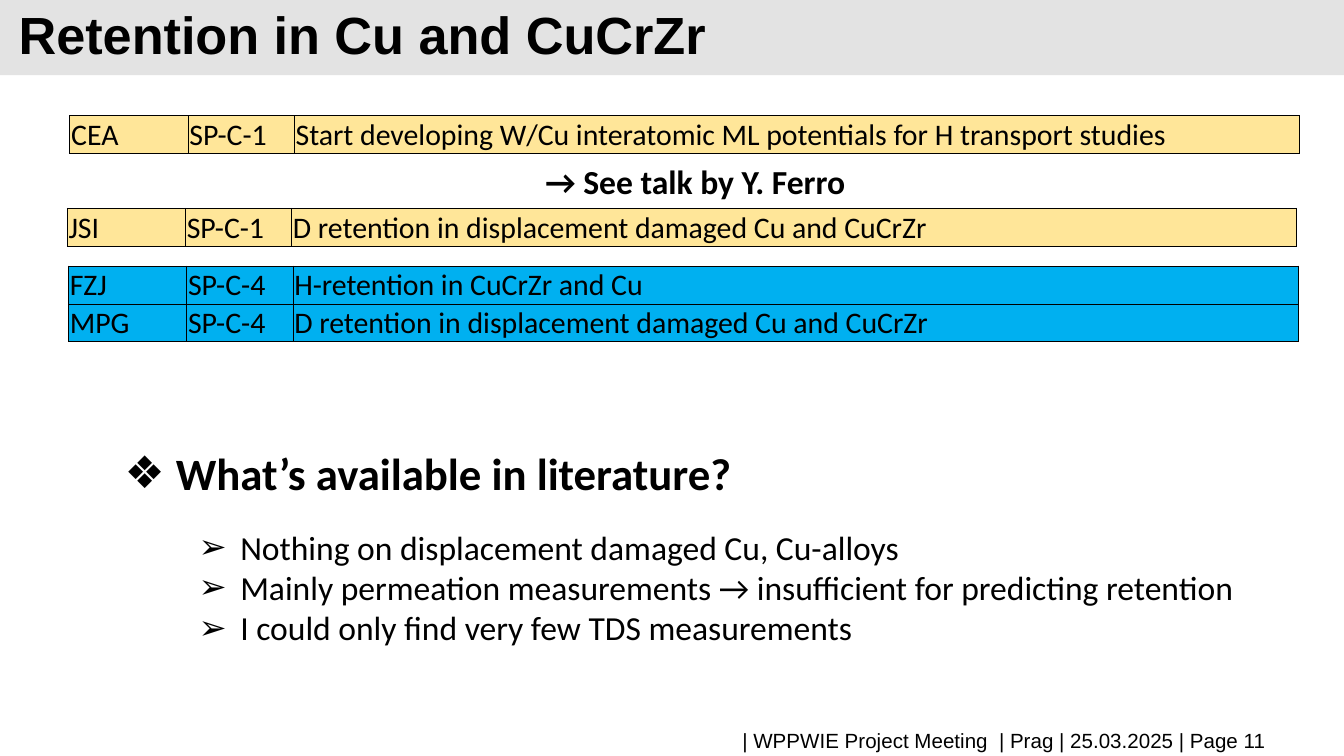
"""Build the slide on retention in Cu and CuCrZr."""
from lxml.etree import SubElement
from pptx import Presentation
from pptx.dml.color import RGBColor
from pptx.enum.shapes import MSO_SHAPE
from pptx.enum.text import MSO_ANCHOR, MSO_AUTO_SIZE, PP_ALIGN
from pptx.oxml.ns import qn
from pptx.util import Inches, Pt

TITLE = "Retention in Cu and CuCrZr"
FOOTER = "| WPPWIE Project Meeting  | Prag | 25.03.2025 | Page 11"
TALK = "→ See talk by Y. Ferro"
QUESTION = "What’s available in literature?"
FINDINGS = [
    "Nothing on displacement damaged Cu, Cu-alloys",
    "Mainly permeation measurements → insufficient for predicting retention",
    "I could only find very few TDS measurements",
]
YELLOW, BLUE = "FFE699", "00B0F0"
TABLES = [
    (0.52, 0.86, YELLOW, [
        ("CEA", "SP-C-1", "Start developing W/Cu interatomic ML potentials for H transport studies"),
    ]),
    (0.51, 1.98, BLUE, [
        ("FZJ", "SP-C-4", "H-retention in CuCrZr and Cu"),
        ("MPG", "SP-C-4", "D retention in displacement damaged Cu and CuCrZr"),
    ]),
    (0.5, 1.55, YELLOW, [
        ("JSI", "SP-C-1", "D retention in displacement damaged Cu and CuCrZr"),
    ]),
]
COLS = [0.88, 0.79, 7.48]
ROW_H = 0.27


def rgb(value):
    return RGBColor.from_string(value)


def add_run(p, text, size, font="Calibri", bold=False):
    r = p.add_run()
    r.text = text
    r.font.size, r.font.name, r.font.bold = Pt(size), font, bold
    r.font.color.rgb = rgb("000000")


def add_text(s, box, lines, size, font="Calibri", bold=False, wrap=False, bullet=None, indent=0):
    tf = s.shapes.add_textbox(*map(Inches, box)).text_frame
    tf.word_wrap = wrap
    tf.auto_size = MSO_AUTO_SIZE.NONE if wrap else MSO_AUTO_SIZE.SHAPE_TO_FIT_TEXT
    for i, line in enumerate(lines):
        p = tf.paragraphs[0] if i == 0 else tf.add_paragraph()
        if bullet:
            pPr = p._p.get_or_add_pPr()
            pPr.set("marL", str(Inches(indent)))
            pPr.set("indent", str(-Inches(indent)))
            SubElement(pPr, qn("a:buFont"), typeface="Arial")
            SubElement(pPr, qn("a:buChar"), char=bullet)
        add_run(p, line, size, font, bold)
    return tf


def add_borders(cell):
    tcPr = cell._tc.get_or_add_tcPr()
    for side in ("lnL", "lnR", "lnT", "lnB"):
        ln = SubElement(tcPr, qn(f"a:{side}"), w=str(Pt(0.5)))
        SubElement(SubElement(ln, qn("a:solidFill")), qn("a:srgbClr"), val="000000")


def add_tasks(s, left, top, color, rows):
    table = s.shapes.add_table(len(rows), len(COLS), Inches(left), Inches(top),
                               Inches(sum(COLS)), Inches(ROW_H * len(rows))).table
    table.first_row = table.horz_banding = False
    for col, width in zip(table.columns, COLS):
        col.width = Inches(width)
    for i, row in enumerate(rows):
        for j, text in enumerate(row):
            cell = table.cell(i, j)
            cell.margin_left = cell.margin_right = cell.margin_top = Inches(0.01)
            cell.margin_bottom = 0
            add_borders(cell)
            cell.fill.solid()
            cell.fill.fore_color.rgb = rgb(color)
            add_run(cell.text_frame.paragraphs[0], text, 16)


def main():
    prs = Presentation()
    prs.slide_width, prs.slide_height = Inches(10), Inches(10 * 9 / 16)
    s = prs.slides.add_slide(prs.slide_layouts[6])

    band = s.shapes.add_shape(MSO_SHAPE.RECTANGLE, 0, 0, prs.slide_width, Inches(0.56))
    band.shadow.inherit = False
    band.fill.solid()
    band.fill.fore_color.rgb = rgb("E3E3E3")
    band.line.fill.background()

    tf = add_text(s, (0.04, 0.07, 8.25, 0.38), [TITLE], 28, "Arial", True, wrap=True)
    tf.vertical_anchor = MSO_ANCHOR.MIDDLE
    tf.paragraphs[0].line_spacing = Pt(32)
    tf = add_text(s, (0.51, 5.37, 9.01, 0.22), [FOOTER], 11, "Arial", wrap=True)
    tf.paragraphs[0].alignment = PP_ALIGN.RIGHT

    for task in TABLES:
        add_tasks(s, *task)

    add_text(s, (0.83, 3.27, 4.76, 0.5), [QUESTION], 24, bold=True, bullet="❖", indent=0.38)
    add_text(s, (1.38, 3.87, 8.03, 1.01), FINDINGS, 18, bullet="➢", indent=0.31)
    add_text(s, (3.96, 1.15, 2.47, 0.4), [TALK], 18, bold=True)
    prs.save("out.pptx")


if __name__ == "__main__":
    main()
